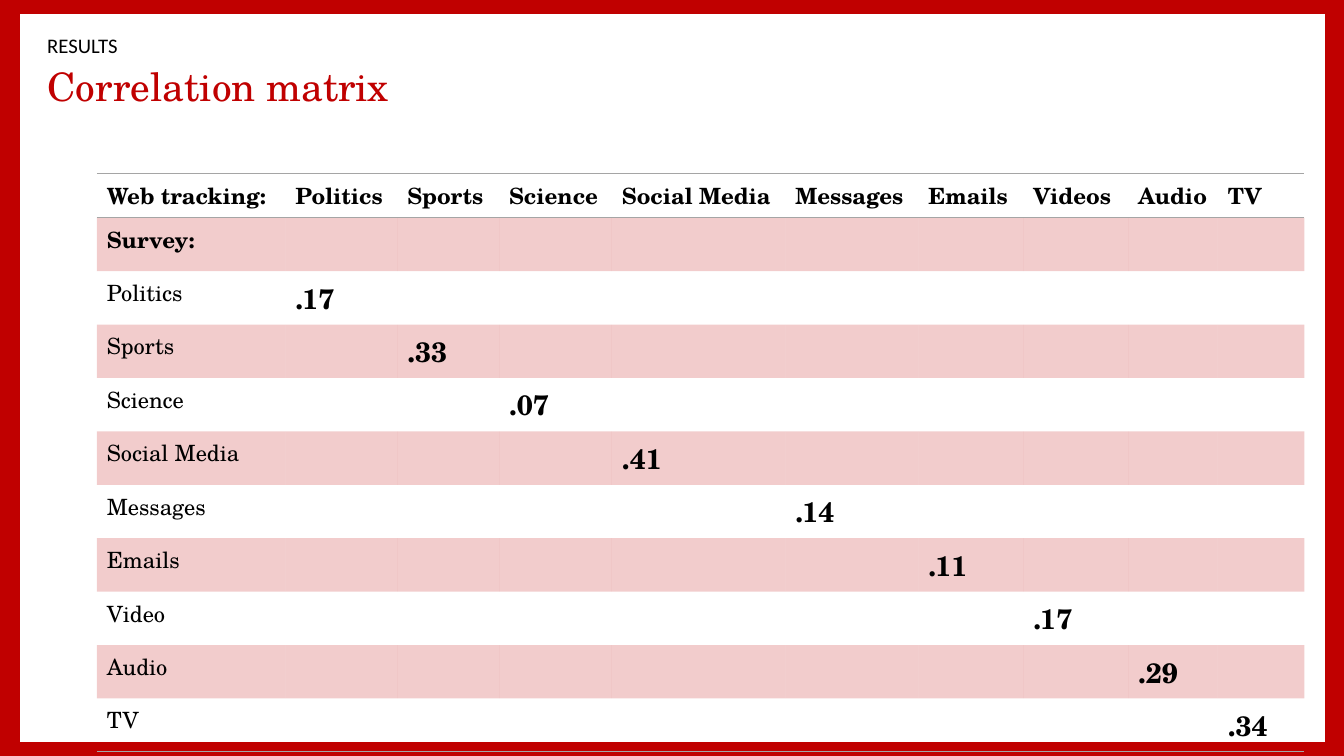
from lxml.etree import SubElement
from pptx import Presentation
from pptx.dml.color import RGBColor
from pptx.enum.shapes import MSO_SHAPE
from pptx.enum.text import MSO_ANCHOR, PP_ALIGN
from pptx.oxml import parse_xml
from pptx.oxml.ns import nsdecls, qn
from pptx.util import Inches, Pt

SERIF, SANS = "TeX Gyre Schola", "Calibri"
RED, WHITE, BLACK, GRAY = "C00000", "FFFFFF", "000000", "A5A5A5"
NO_GRID_STYLE = "{2D5ABB26-0587-4C30-8999-92F81FD0307C}"

SECTION = "RESULTS"
TITLE = "Correlation matrix"
HEADERS = ["Web tracking:", "Politics", "Sports", "Science", "Social Media",
           "Messages", "Emails", "Videos", "Audio", "TV"]
CORRELATIONS = [("Politics", ".17"), ("Sports", ".33"), ("Science", ".07"),
                ("Social Media", ".41"), ("Messages", ".14"), ("Emails", ".11"),
                ("Video", ".17"), ("Audio", ".29"), ("TV", ".34")]
COLUMN_WIDTHS = [1.87, 1.11, 1.01, 1.12, 1.72, 1.32, 1.04, 1.04, 0.89, 0.86]
HEADER_HEIGHT, ROW_HEIGHT = 0.44, 0.53
FRAMES = [((0, 0, 13.33, 7.5), RED), ((0.2, 0.14, 12.94, 7.22), WHITE)]


def color(value):
    return RGBColor.from_string(value)


def box(left, top, width, height):
    return [Inches(length) for length in (left, top, width, height)]


def write(text_frame, text, size, font_name, font_color, bold=False, spacing=None):
    text_frame.text = text
    paragraph = text_frame.paragraphs[0]
    paragraph.alignment = PP_ALIGN.LEFT
    paragraph.line_spacing = spacing
    font = paragraph.font
    font.size, font.name, font.bold = Pt(size), font_name, bold
    font.color.rgb = color(font_color)


def add_border(cell, side):
    border = parse_xml(
        f'<a:{side} {nsdecls("a")} w="12700"><a:solidFill>'
        f'<a:srgbClr val="{GRAY}"/></a:solidFill></a:{side}>')
    cell._tc.get_or_add_tcPr().append(border)


def fill_band(cell):
    cell.fill.solid()
    cell.fill.fore_color.rgb = color(RED)
    fill_color = cell._tc.tcPr.find(".//" + qn("a:solidFill") + "/" + qn("a:srgbClr"))
    SubElement(fill_color, qn("a:alpha"), val="20000")


def add_frames(slide):
    for place, fill_color in FRAMES:
        shape = slide.shapes.add_shape(MSO_SHAPE.RECTANGLE, *box(*place))
        shape.shadow.inherit = False
        shape.fill.solid()
        shape.fill.fore_color.rgb = color(fill_color)
        shape.line.fill.background()
        slide.shapes.title.element.addprevious(shape.element)


def add_headings(slide):
    title = slide.shapes.title
    title.left, title.top, title.width, title.height = box(0.37, 0.65, 11.67, 0.47)
    section = slide.shapes.add_textbox(*box(0.37, 0.32, 11.28, 0.31))
    for shape, text, style in ((title, TITLE, (28, SERIF, RED, False, 0.9)),
                               (section, SECTION, (14.8, SANS, BLACK, False, 0.8))):
        shape.text_frame.word_wrap = True
        shape.text_frame.vertical_anchor = MSO_ANCHOR.MIDDLE
        write(shape.text_frame, text, *style)


def add_matrix(slide):
    rows = [HEADERS, ["Survey:"] + [""] * len(CORRELATIONS)]
    for position, (name, value) in enumerate(CORRELATIONS):
        values = [""] * len(CORRELATIONS)
        values[position] = value
        rows.append([name] + values)
    height = HEADER_HEIGHT + ROW_HEIGHT * (len(rows) - 1)
    frame = slide.shapes.add_table(len(rows), len(HEADERS),
                                   *box(0.96, 1.72, sum(COLUMN_WIDTHS), height))
    table = frame.table
    table.horz_banding = False
    frame.element.find(".//" + qn("a:tableStyleId")).text = NO_GRID_STYLE
    for column, width in zip(table.columns, COLUMN_WIDTHS):
        column.width = Inches(width)

    for row_index, texts in enumerate(rows):
        table.rows[row_index].height = Inches(ROW_HEIGHT if row_index else HEADER_HEIGHT)
        for column_index, text in enumerate(texts):
            cell = table.cell(row_index, column_index)
            is_value = row_index > 1 and column_index > 0
            write(cell.text_frame, text, 20 if is_value else 16, SERIF, BLACK,
                  bold=row_index < 2 or is_value)
            if row_index == 0:
                add_border(cell, "lnT")
            if row_index in (0, len(rows) - 1):
                add_border(cell, "lnB")
            if row_index % 2:
                fill_band(cell)
            else:
                cell.fill.background()


def main():
    presentation = Presentation()
    presentation.slide_width, presentation.slide_height = Inches(13.33), Inches(7.5)
    slide = presentation.slides.add_slide(presentation.slide_layouts[5])
    add_frames(slide)
    add_headings(slide)
    add_matrix(slide)
    presentation.save("out.pptx")


if __name__ == "__main__":
    main()
